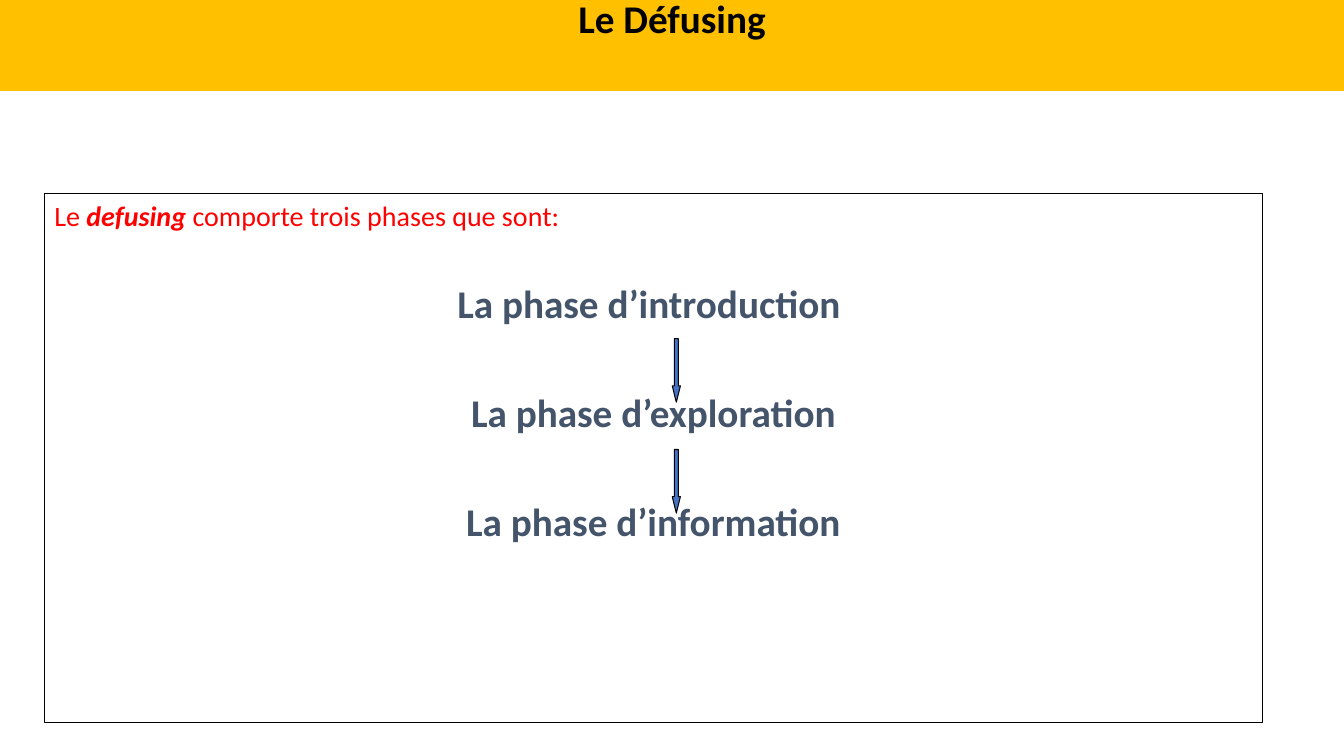
from dataclasses import dataclass

from pptx import Presentation
from pptx.dml.color import RGBColor
from pptx.enum.shapes import MSO_SHAPE
from pptx.enum.text import MSO_ANCHOR, MSO_AUTO_SIZE, PP_ALIGN
from pptx.shapes.autoshape import Shape
from pptx.text.text import TextFrame, _Paragraph
from pptx.util import Pt

RECT, ARROW = MSO_SHAPE.RECTANGLE, MSO_SHAPE.DOWN_ARROW
TOP, NO_FIT = MSO_ANCHOR.TOP, MSO_AUTO_SIZE.NONE
CENTER, JUSTIFY = PP_ALIGN.CENTER, PP_ALIGN.JUSTIFY

AMBER, BLUE, SLATE = "FFC000", "4472C4", "44546A"
RED, BLACK = "FF0000", "000000"


@dataclass
class Box:
    left: float
    top: float
    width: float
    height: float


@dataclass
class Phase:
    text: str
    gap: float


BAND = Box(0, -4.3, 960, 69.1)
FRAME = Box(31.7, 138.2, 869.8, 378)
STEM = Box(480.2, 241.9, 5.8, 45.4)
PITCH = 79.2
PHASES = [
    Phase("La phase d’introduction ", 33.5),
    Phase("La phase d’exploration", 44.3),
    Phase("La phase d’information", 44.3),
]


def color(code: str) -> RGBColor:
    return RGBColor.from_string(code)


def paint(shape: Shape, fill: str | None, line: str, width: float) -> None:
    if fill:
        shape.fill.solid()
        shape.fill.fore_color.rgb = color(fill)
    else:
        shape.fill.background()
    shape.line.color.rgb = color(line)
    shape.line.width = Pt(width)


def add_box(kind: MSO_SHAPE, box: Box, fill: str | None) -> Shape:
    shape = slide.shapes.add_shape(
        kind, Pt(box.left), Pt(box.top), Pt(box.width), Pt(box.height))
    shape.shadow.inherit = False
    paint(shape, fill, BLACK, 0.75)
    return shape


def set_frame(frame: TextFrame, side: float, edge: float) -> None:
    form = {
        "word_wrap": True, "auto_size": NO_FIT, "vertical_anchor": TOP,
        "margin_left": Pt(side), "margin_right": Pt(side),
        "margin_top": Pt(edge), "margin_bottom": Pt(edge),
    }
    for name, value in form.items():
        setattr(frame, name, value)


def set_para(para: _Paragraph, align: PP_ALIGN, gap: float) -> None:
    form = {"alignment": align, "space_before": Pt(gap), "line_spacing": 1.0}
    for name, value in form.items():
        setattr(para, name, value)


def add_run(para: _Paragraph, text: str, size: float, ink: str,
            bold: bool, italic: bool = False) -> None:
    run = para.add_run()
    run.text = text
    form = {"name": "Calibri", "size": Pt(size), "bold": bold, "italic": italic}
    for name, value in form.items():
        setattr(run.font, name, value)
    run.font.color.rgb = color(ink)


deck = Presentation()
deck.slide_width, deck.slide_height = Pt(960), Pt(540)
slide = deck.slides.add_slide(deck.slide_layouts[5])

# Title band
title = slide.shapes.title
title.left, title.top = Pt(BAND.left), Pt(BAND.top)
title.width, title.height = Pt(BAND.width), Pt(BAND.height)
paint(title, AMBER, AMBER, 1)
set_frame(title.text_frame, 7.2, 0)
head = title.text_frame.paragraphs[0]
set_para(head, CENTER, 0)
add_run(head, "Le Défusing", 28, BLACK, True)

# Framed list of phases
body = add_box(RECT, FRAME, None).text_frame
set_frame(body, 7.2, 3.6)
intro = body.paragraphs[0]
set_para(intro, JUSTIFY, 0)
add_run(intro, "Le ", 20, RED, False)
add_run(intro, "defusing ", 20, RED, True, True)
add_run(intro, "comporte trois phases que sont:", 20, RED, False)
for phase in PHASES:
    para = body.add_paragraph()
    set_para(para, CENTER, phase.gap)
    add_run(para, phase.text, 28, SLATE, True)

# Arrows between phases
for step in range(len(PHASES) - 1):
    spot = Box(STEM.left, STEM.top + step * PITCH, STEM.width, STEM.height)
    arrow = add_box(ARROW, spot, BLUE)
    arrow.adjustments[1] = 2.01

deck.save("out.pptx")
